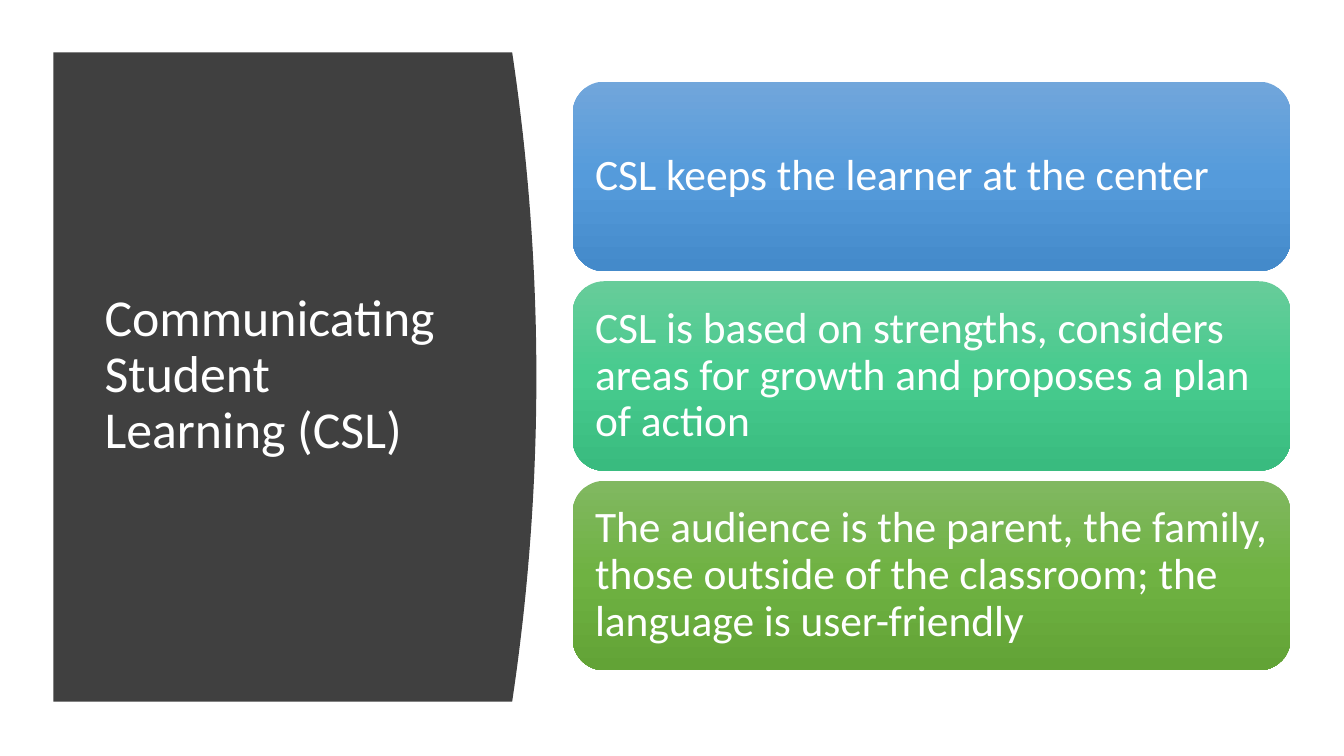
"""Build a slide with a curved title panel and three gradient statement cards."""
import copy

import pptx
import pptx.dml.color
import pptx.enum.shapes
import pptx.enum.text
import pptx.oxml.ns
import pptx.util

RGBColor = pptx.dml.color.RGBColor
PX = 9144
FONT = "Calibri"
WHITE = RGBColor(0xFF, 0xFF, 0xFF)
CHARCOAL = RGBColor(0x40, 0x40, 0x40)
BLUES = (RGBColor(0x71, 0xA6, 0xDB), RGBColor(0x55, 0x9B, 0xDB), RGBColor(0x44, 0x8A, 0xCA))
TEALS = (RGBColor(0x67, 0xCC, 0x9A), RGBColor(0x47, 0xCB, 0x8E), RGBColor(0x39, 0xBB, 0x7F))
GREENS = (RGBColor(0x81, 0xB8, 0x61), RGBColor(0x6F, 0xB2, 0x42), RGBColor(0x62, 0xA3, 0x36))

CARDS = [
    ("CSL keeps the learner at the center", BLUES),
    ("CSL is based on strengths, considers areas for growth and proposes a plan of action", TEALS),
    ("The audience is the parent, the family, those outside of the classroom; "
     "the language is user-friendly", GREENS),
]
CARD_TOP, CARD_HEIGHT, CARD_PITCH = 81, 188, 198
PANEL_LEFT, PANEL_TOP, PANEL_EDGE, PANEL_HEIGHT = 53, 52, 508, 644
BULGE, CURVE_STEPS = 24, 40


def write_text(box, text, size):
    frame = box.text_frame
    frame.word_wrap = True
    frame.vertical_anchor = pptx.enum.text.MSO_ANCHOR.MIDDLE
    frame.text = text
    para = frame.paragraphs[0]
    para.alignment = pptx.enum.text.PP_ALIGN.LEFT
    para.line_spacing = 0.9
    span = para.runs[0]
    span.font.name = FONT
    span.font.size = pptx.util.Pt(size)
    span.font.color.rgb = WHITE


deck = pptx.Presentation()
deck.slide_width = 1333 * PX
deck.slide_height = 750 * PX
page = deck.slides.add_slide(deck.slide_layouts[6])

curve = []
for step in range(CURVE_STEPS + 1):
    share = step / CURVE_STEPS
    x = PANEL_EDGE + BULGE * (1 - (2 * share - 1) ** 2)
    y = PANEL_TOP + PANEL_HEIGHT * share
    curve.append((x * PX, y * PX))
outline = page.shapes.build_freeform(PANEL_LEFT * PX, PANEL_TOP * PX)
outline.add_line_segments(curve + [(PANEL_LEFT * PX, (PANEL_TOP + PANEL_HEIGHT) * PX)])
panel = outline.convert_to_shape()
panel.shadow.inherit = False
panel.fill.solid()
panel.fill.fore_color.rgb = CHARCOAL
panel.line.fill.background()

title = page.shapes.add_textbox(94 * PX, 111 * PX, 374 * PX, 524 * PX)
write_text(title, "Communicating Student Learning (CSL)", 37)

for index, (statement, colours) in enumerate(CARDS):
    card = page.shapes.add_shape(
        pptx.enum.shapes.MSO_SHAPE.ROUNDED_RECTANGLE,
        568 * PX, (CARD_TOP + index * CARD_PITCH) * PX, 712 * PX, CARD_HEIGHT * PX)
    card.shadow.inherit = False
    card.line.fill.background()
    card.fill.gradient()
    card.fill.gradient_angle = 270
    stop_list = next(card._element.spPr.iter(pptx.oxml.ns.qn("a:gsLst")))
    stop_list.insert(1, copy.deepcopy(stop_list[0]))
    for stop, position, colour in zip(card.fill.gradient_stops, (0, 0.5, 1), colours):
        stop.position = position
        stop.color.rgb = colour
    frame = card.text_frame
    frame.margin_left = frame.margin_right = 13 * PX
    frame.margin_top = frame.margin_bottom = 13 * PX
    write_text(card, statement, 31)

deck.save("out.pptx")
